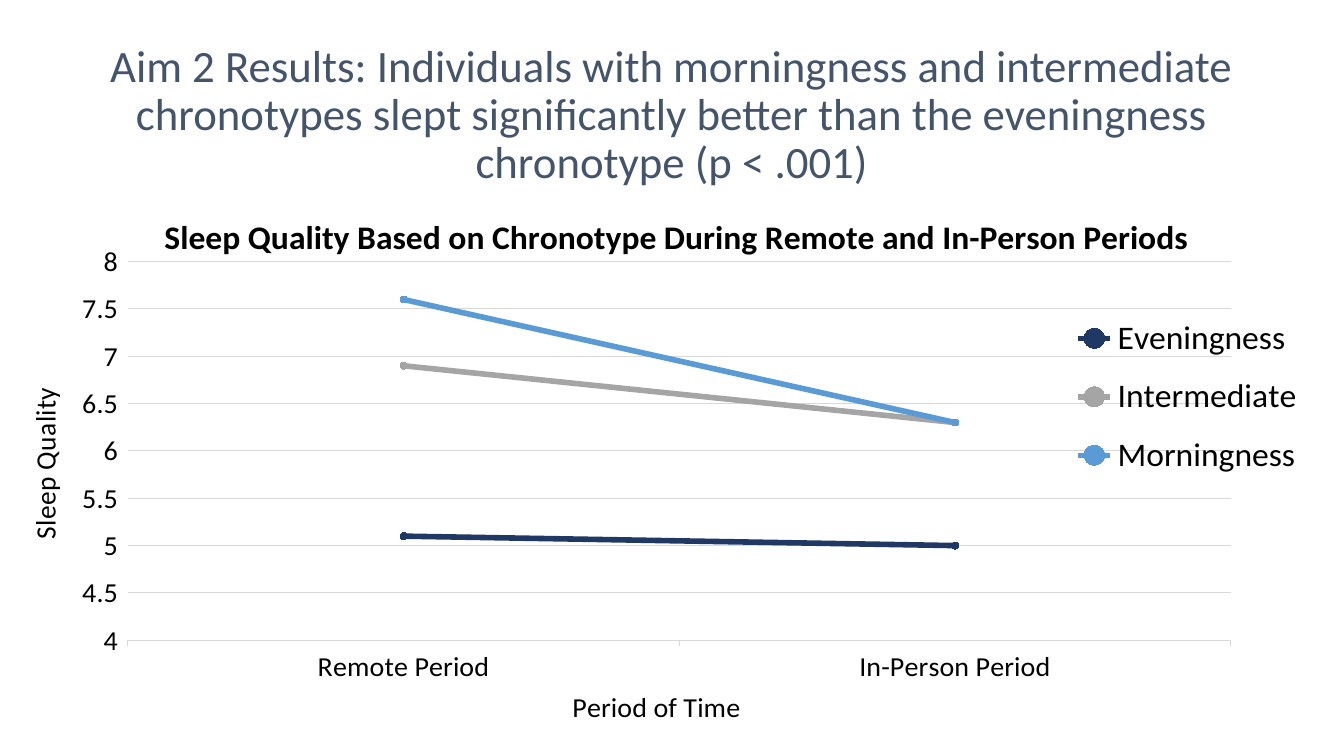
from dataclasses import dataclass
from typing import Optional

from lxml.etree import SubElement
from pptx import Presentation
from pptx.chart.chart import Chart
from pptx.chart.data import CategoryChartData
from pptx.dml.color import RGBColor
from pptx.enum.chart import XL_CHART_TYPE as ChartType
from pptx.enum.chart import XL_LEGEND_POSITION as LegendPosition
from pptx.enum.chart import XL_MARKER_STYLE as MarkerStyle
from pptx.enum.chart import XL_TICK_MARK as TickMark
from pptx.enum.text import MSO_ANCHOR as Anchor
from pptx.enum.text import MSO_AUTO_SIZE as AutoSize
from pptx.enum.text import PP_ALIGN as Align
from pptx.oxml.ns import qn
from pptx.util import Pt


@dataclass(frozen=True)
class Theme:
    font: str = "Calibri"
    heading: str = "44546A"
    text: str = "000000"
    rule: str = "D9D9D9"
    heading_size: float = 32
    chart_title_size: float = 24
    legend_size: float = 24
    axis_size: float = 20
    rule_width: float = 0.75
    line_width: float = 4
    marker_size: int = 5


@dataclass(frozen=True)
class Chronotype:
    name: str
    quality: tuple[float, float]
    color: str


@dataclass(frozen=True)
class Placement:
    x: float
    y: float
    w: Optional[float] = None
    h: Optional[float] = None


THEME = Theme()
PERIODS = ("Remote Period", "In-Person Period")
CHRONOTYPES = (
    Chronotype("Eveningness", (5.1, 5.0), "203864"),
    Chronotype("Intermediate", (6.9, 6.3), "A5A5A5"),
    Chronotype("Morningness", (7.6, 6.3), "5B9BD5"),
)


def style_font(font, size: float, color: str = THEME.text, bold: bool = False) -> None:
    font.name = THEME.font
    font.size = Pt(size)
    font.bold = bold
    font.color.rgb = RGBColor.from_string(color)


def style_line(line, color: str, width: float) -> None:
    line.color.rgb = RGBColor.from_string(color)
    line.width = Pt(width)


def place(element, placement: Placement, inner: bool = False) -> None:
    for former in element.findall(qn("c:layout")):
        element.remove(former)
    layout = element.makeelement(qn("c:layout"), {})
    overlay = element.find(qn("c:overlay"))
    if overlay is None:
        element.insert(0, layout)
    else:
        overlay.addprevious(layout)
    manual = SubElement(layout, qn("c:manualLayout"))
    if inner:
        SubElement(manual, qn("c:layoutTarget"), val="inner")
    for axis in "xy":
        SubElement(manual, qn(f"c:{axis}Mode"), val="edge")
    for side in "xywh":
        share = getattr(placement, side)
        if share is not None:
            SubElement(manual, qn(f"c:{side}"), val=str(share))


def write_title(title, words: str, size: float, placement: Placement, bold: bool = False) -> None:
    title.text_frame.text = words
    style_font(title.text_frame.paragraphs[0].font, size, bold=bold)
    place(title._element, placement)


def format_axes(chart: Chart) -> None:
    period, quality = chart.category_axis, chart.value_axis
    for axis, words, placement in (
        (period, "Period of Time", Placement(0.43, 0.93)),
        (quality, "Sleep Quality", Placement(0.015, 0.38)),
    ):
        write_title(axis.axis_title, words, THEME.axis_size, placement)
        style_font(axis.tick_labels.font, THEME.axis_size)
        axis.major_tick_mark = TickMark.OUTSIDE
        axis.minor_tick_mark = TickMark.NONE
    turned = quality.axis_title.text_frame._txBody.bodyPr
    turned.set("rot", "-5400000")
    turned.set("vert", "horz")
    style_line(period.format.line, THEME.rule, THEME.rule_width)
    quality.format.line.fill.background()
    quality.minimum_scale, quality.maximum_scale, quality.major_unit = 4, 8, 0.5
    quality.tick_labels.number_format = "General"
    quality.tick_labels.number_format_is_linked = False
    quality.has_major_gridlines = True
    style_line(quality.major_gridlines.format.line, THEME.rule, THEME.rule_width)


def format_series(chart: Chart) -> None:
    chart.plots[0].vary_by_categories = False
    for series, chronotype in zip(chart.plots[0].series, CHRONOTYPES):
        series.smooth = False
        style_line(series.format.line, chronotype.color, THEME.line_width)
        series.marker.style = MarkerStyle.CIRCLE
        series.marker.size = THEME.marker_size
        series.marker.format.fill.solid()
        series.marker.format.fill.fore_color.rgb = RGBColor.from_string(chronotype.color)
        style_line(series.marker.format.line, chronotype.color, THEME.rule_width)


def add_sleep_chart(slide) -> None:
    sleep_data = CategoryChartData()
    sleep_data.categories = PERIODS
    for chronotype in CHRONOTYPES:
        sleep_data.add_series(chronotype.name, chronotype.quality)
    chart = slide.shapes.add_chart(
        ChartType.LINE_MARKERS, Pt(0), Pt(129.6), Pt(942.5), Pt(393.8), sleep_data
    ).chart
    style_font(chart.font, 10)
    chart.has_title = True
    write_title(
        chart.chart_title,
        "Sleep Quality Based on Chronotype During Remote and In-Person Periods",
        THEME.chart_title_size,
        Placement(0.12, 0.05),
        bold=True,
    )
    chart.has_legend = True
    chart.legend.position = LegendPosition.RIGHT
    chart.legend.include_in_layout = False
    style_font(chart.legend.font, THEME.legend_size)
    place(chart.legend._element, Placement(0.81, 0.22, 0.18, 0.36))
    format_axes(chart)
    format_series(chart)
    plot_area = chart._chartSpace.chart.plotArea
    place(plot_area, Placement(0.097, 0.149, 0.836, 0.703), inner=True)


def write_heading(slide) -> None:
    heading = slide.shapes.title
    heading.left, heading.top = Pt(63.4), Pt(36)
    heading.width, heading.height = Pt(833), Pt(93.6)
    frame = heading.text_frame
    frame.text = (
        "Aim 2 Results: Individuals with morningness and intermediate chronotypes "
        "slept significantly better than the eveningness chronotype (p < .001)"
    )
    frame.word_wrap = True
    frame.auto_size = AutoSize.NONE
    frame.vertical_anchor = Anchor.MIDDLE
    paragraph = frame.paragraphs[0]
    paragraph.alignment = Align.CENTER
    paragraph.line_spacing = 0.9
    style_font(paragraph.font, THEME.heading_size, THEME.heading)


def main() -> None:
    deck = Presentation()
    deck.slide_width, deck.slide_height = Pt(960), Pt(540)
    slide = deck.slides.add_slide(deck.slide_layouts[5])
    write_heading(slide)
    add_sleep_chart(slide)
    deck.save("out.pptx")


if __name__ == "__main__":
    main()
